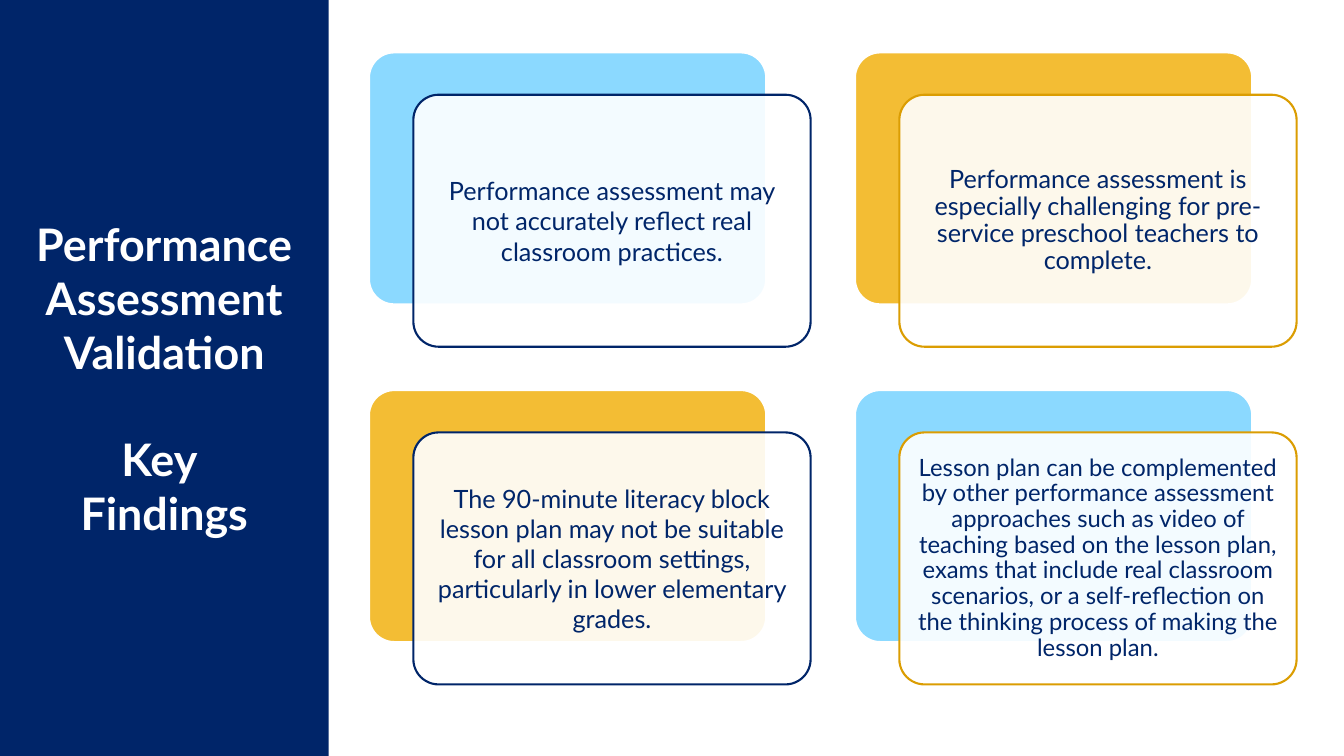
from pptx import Presentation
from pptx import util as u
from pptx.dml import color
from pptx.enum import shapes, text
from pptx.oxml import ns
from lxml import etree

PX = 9144
NAVY, SKY, GOLD, OCHRE, WHITE = "002569", "6ED0FF", "F1AD02", "DB9D02", "FFFFFF"
FINDS = [
    ("Performance assessment may not accurately reflect real classroom practices.",
     SKY, NAVY, 18, 1.0),
    ("Performance assessment is especially challenging for pre-service preschool "
     "teachers to complete.", GOLD, OCHRE, 18, 0.9),
    ("The 90-minute literacy block lesson plan may not be suitable for all classroom "
     "settings, particularly in lower elementary grades.", GOLD, NAVY, 18, 1.0),
    ("Lesson plan can be complemented by other performance assessment approaches such "
     "as video of teaching based on the lesson plan, exams that include real classroom "
     "scenarios, or a self-reflection on the thinking process of making the lesson plan.",
     SKY, OCHRE, 17, 0.9),
]


def px(n):
    return u.Emu(n * PX)


def put(item, **vals):
    for key, val in vals.items():
        setattr(item, key, val)


def paint(fill, tone, alpha=100):
    fill.solid()
    fill.fore_color.rgb = color.RGBColor.from_string(tone)
    if alpha < 100:
        node = fill._xPr.find(ns.qn("a:solidFill"))[0]
        etree.SubElement(node, ns.qn("a:alpha"), val=str(alpha * 1000))


def style(para, size, tone, **vals):
    put(para, alignment=text.PP_ALIGN.CENTER, **vals)
    put(para.font, name="Lato", size=u.Pt(size))
    paint(para.font.fill, tone)


def panel(slide, x, y, w, h):
    title = slide.shapes.title
    put(title, left=px(x), top=px(y), width=px(w), height=px(h))
    paint(title.fill, NAVY)
    frame = title.text_frame
    put(frame, word_wrap=True, auto_size=text.MSO_AUTO_SIZE.NONE,
        vertical_anchor=text.MSO_ANCHOR.MIDDLE)
    frame.text = "Performance Assessment Validation\nKey \nFindings"
    for i, para in enumerate(frame.paragraphs):
        style(para, 32, WHITE, space_before=u.Pt(38.4 if i == 1 else 0))
        para.font.bold = True


def plate(slide, x, y, w, h, tone, alpha, edge):
    shape = slide.shapes.add_shape(shapes.MSO_SHAPE.ROUNDED_RECTANGLE,
                                   px(x), px(y), px(w), px(h))
    shape.adjustments[0] = 0.1
    shape.shadow.inherit = False
    paint(shape.fill, tone, alpha)
    paint(shape.line.fill, edge)
    shape.line.width = u.Pt(1.5)
    return shape


def card(slide, x, y, w, h, words, back, edge, size, lead):
    plate(slide, x, y, w, h, back, 80, WHITE)
    front = plate(slide, x + 44, y + 42, w, h, WHITE, 90, edge)
    frame = front.text_frame
    put(frame, word_wrap=True, vertical_anchor=text.MSO_ANCHOR.MIDDLE,
        margin_left=px(7), margin_right=px(7), margin_top=px(7), margin_bottom=px(7))
    frame.text = words
    style(frame.paragraphs[0], size, NAVY, line_spacing=lead)


def grid(slide, x, y, w, h):
    for i, find in enumerate(FINDS):
        row, col = divmod(i, 2)
        card(slide, x + col * (w + 88), y + row * (h + 85), w, h, *find)


def main():
    deck = Presentation()
    put(deck, slide_width=px(1333), slide_height=px(750))
    slide = deck.slides.add_slide(deck.slide_layouts[5])
    panel(slide, 0, 0, 326, 750)
    grid(slide, 366, 52, 394, 250)
    deck.save("out.pptx")


if __name__ == "__main__":
    main()
